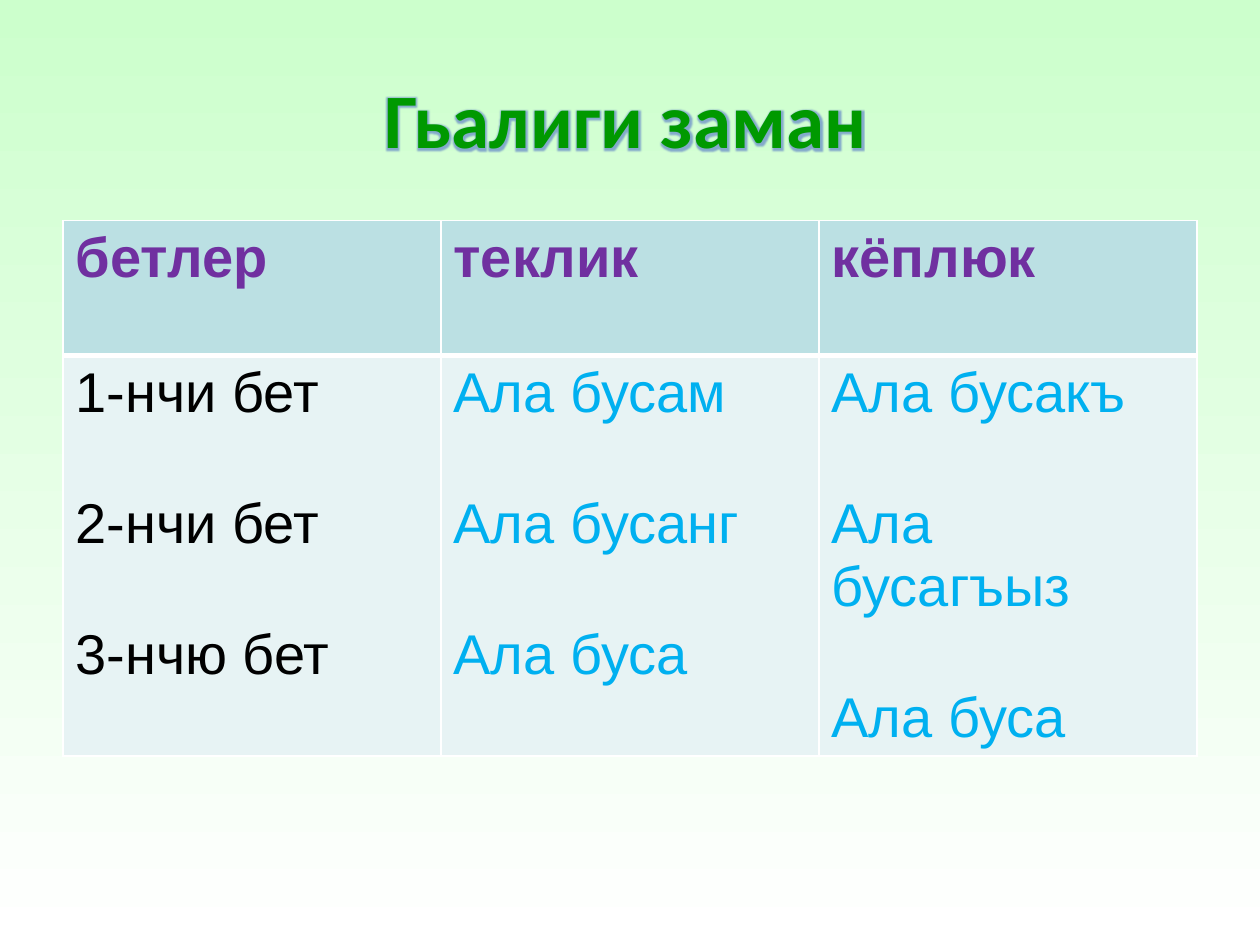
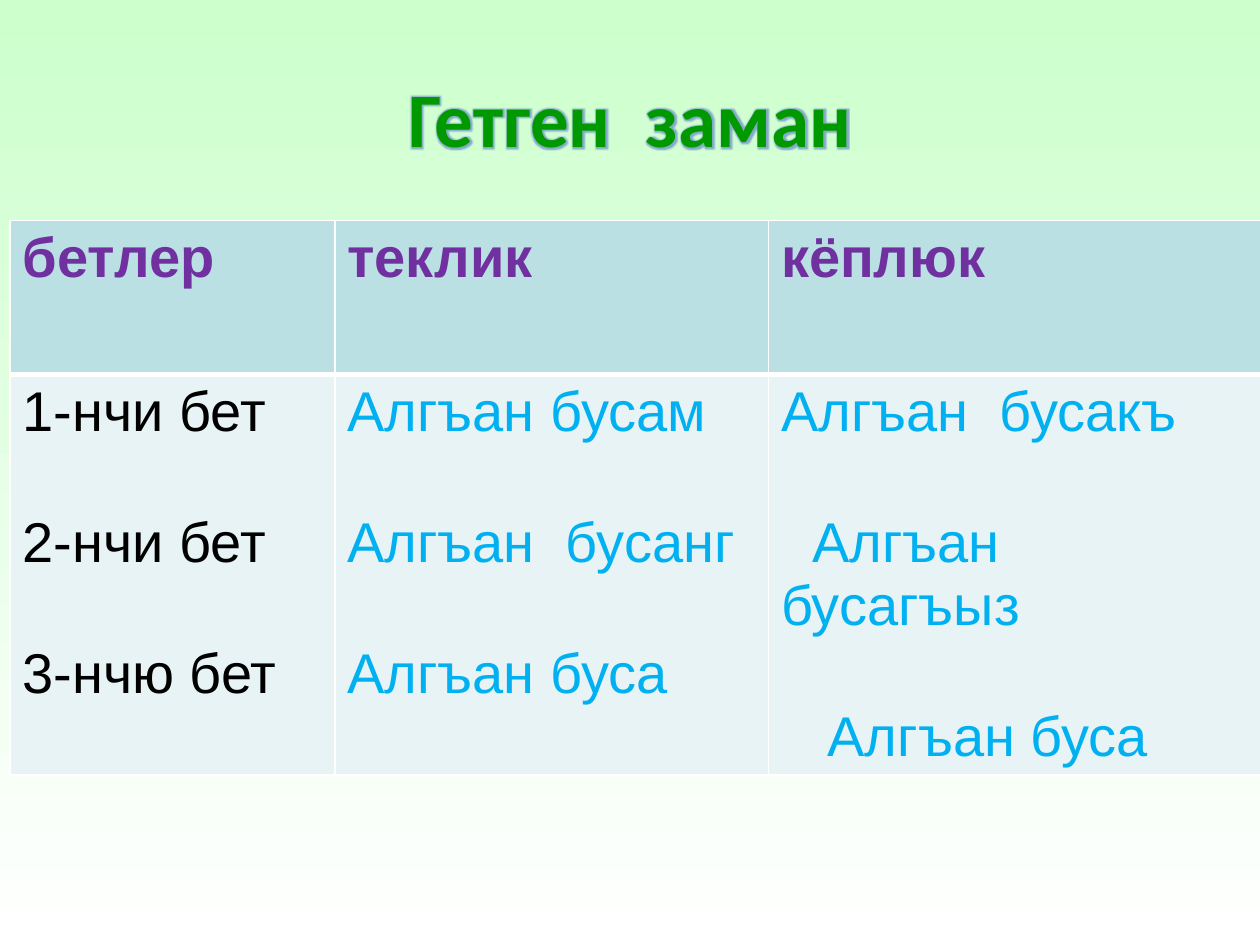
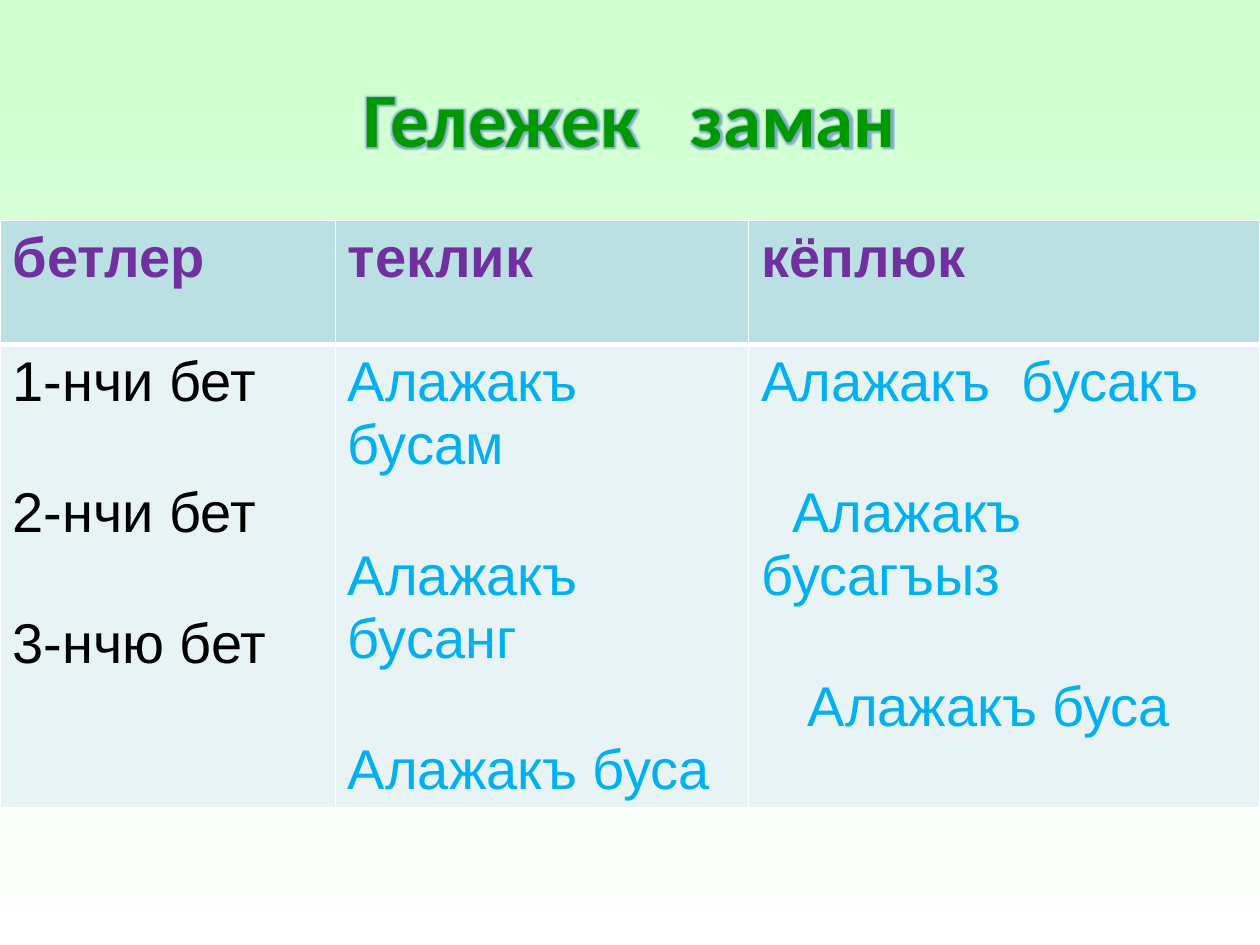
import pptx
import pptx.dml.color
import pptx.enum.text
import pptx.oxml
import pptx.oxml.ns
import pptx.util

Cm = pptx.util.Cm
Pt = pptx.util.Pt
RGB = pptx.dml.color.RGBColor

MINT = RGB(0xCC, 0xFF, 0xCC)
WHITE = RGB(0xFF, 0xFF, 0xFF)
GREEN = RGB(0x00, 0x99, 0x00)
YELLOW = RGB(0xFF, 0xFF, 0x00)
BLUE = RGB(0x5B, 0x7D, 0xC8)
PURPLE = RGB(0x70, 0x30, 0xA0)
BLACK = RGB(0x00, 0x00, 0x00)
SKY = RGB(0x00, 0xB0, 0xF0)
TEAL = RGB(0xBB, 0xE0, 0xE3)
PALE = RGB(0xE7, 0xF3, 0xF4)

HEADS = ["бетлер", "теклик", "кёплюк"]
FACES = ["1-нчи бет", "2-нчи бет", "3-нчю бет"]
INKS = [BLACK, SKY, SKY]
FLAT = [0, 0, 0]
STEPS = [0, 0.63, 0.94]


def make(tag, attrs, inner):
    space = pptx.oxml.ns.nsdecls("a")
    return pptx.oxml.parse_xml(f"<a:{tag} {space} {attrs}>{inner}</a:{tag}>")


def solid(color):
    return f'<a:solidFill><a:srgbClr val="{color}"/></a:solidFill>'


class Deck:
    def __init__(self):
        self.show = pptx.Presentation()
        self.show.slide_width = Cm(25.4)
        self.show.slide_height = Cm(19.05)
        fill = self.show.slide_master.background.fill
        fill.gradient()
        fill.gradient_angle = 270
        for stop, color in zip(fill.gradient_stops, (MINT, WHITE)):
            stop.color.rgb = color
        self.slide = None

    def start(self):
        self.slide = self.show.slides.add_slide(self.show.slide_layouts[5])

    def style(self, para, font, size, color, bold):
        for run in para.runs:
            run.font.name = font
            run.font.size = Pt(size)
            run.font.bold = bold
            run.font.color.rgb = color

    def title(self, text, left, top):
        box = self.slide.shapes.title
        box.left, box.top = Cm(left), Cm(top)
        box.width, box.height = Cm(22.86), Cm(3.18)
        frame = box.text_frame
        frame.text = text
        frame.vertical_anchor = pptx.enum.text.MSO_ANCHOR.MIDDLE
        para = frame.paragraphs[0]
        para.alignment = pptx.enum.text.PP_ALIGN.CENTER
        self.style(para, "Calibri", 44, GREEN, True)
        props = para.runs[0]._r.get_or_add_rPr()
        props.insert(0, make("ln", f'w="{Pt(1.42)}"', solid(YELLOW)))
        glow = (f'<a:glow rad="{Pt(3.6)}"><a:srgbClr val="{BLUE}">'
                '<a:alpha val="65000"/></a:srgbClr></a:glow>')
        props.insert(2, make("effectLst", "", glow))

    def cell(self, cell, lines, color, fill, bold, steps, edges):
        cell.text_frame.text = "\n".join(lines)
        for index, para in enumerate(cell.text_frame.paragraphs):
            self.style(para, "Arial", 32, color, bold)
            if index:
                para.space_before = Pt(39)
            if steps[index]:
                props = para._p.get_or_add_pPr()
                props.set("marL", "0")
                props.set("indent", str(Cm(steps[index])))
        props = cell._tc.get_or_add_tcPr()
        for side, width in zip("LRTB", edges):
            props.append(make(f"ln{side}", f'w="{Pt(width)}"', solid(WHITE)))
        cell.fill.solid()
        cell.fill.fore_color.rgb = fill

    def table(self, left, widths, heights, ones, manys, steps):
        frame = self.slide.shapes.add_table(
            2, 3, Cm(left), Cm(4.45), Cm(sum(widths)), Cm(sum(heights)))
        table = frame.table
        table.first_row = table.horz_banding = False
        for row, height in zip(table.rows, heights):
            row.height = Cm(height)
        lists = [FACES, ones, manys]
        for col, width in enumerate(widths):
            table.columns[col].width = Cm(width)
            self.cell(table.cell(0, col), [HEADS[col]], PURPLE, TEAL,
                      True, FLAT, (1, 1, 1, 3))
            self.cell(table.cell(1, col), lists[col], INKS[col], PALE,
                      False, steps if col == 2 else FLAT, (1, 1, 3, 1))

    def save(self):
        self.show.save("out.pptx")


def main():
    deck = Deck()

    deck.start()
    deck.title("Гьалиги заман", 1.19, 0.79)
    deck.table(1.27, [7.62] * 3, [2.72, 7.32],
               ["Ала бусам", "Ала бусанг", "Ала буса"],
               ["Ала бусакъ", "Ала бусагъыз", "Ала буса"], FLAT)

    deck.start()
    deck.title("Гетген  заман", 1.27, 0.76)
    deck.table(0.2, [6.55, 8.74, 9.92], [3.1, 7.04],
               ["Алгъан бусам", "Алгъан  бусанг", "Алгъан буса"],
               ["Алгъан  бусакъ", "Алгъан бусагъыз", "Алгъан буса"], STEPS)

    deck.start()
    deck.title("Гележек   заман", 1.27, 0.76)
    deck.table(0, [6.76, 8.33, 10.31], [2.49, 8.36],
               ["Алажакъ бусам", "Алажакъ  бусанг", "Алажакъ буса"],
               ["Алажакъ  бусакъ", "Алажакъ бусагъыз", "Алажакъ буса"], STEPS)

    deck.save()


if __name__ == "__main__":
    main()
